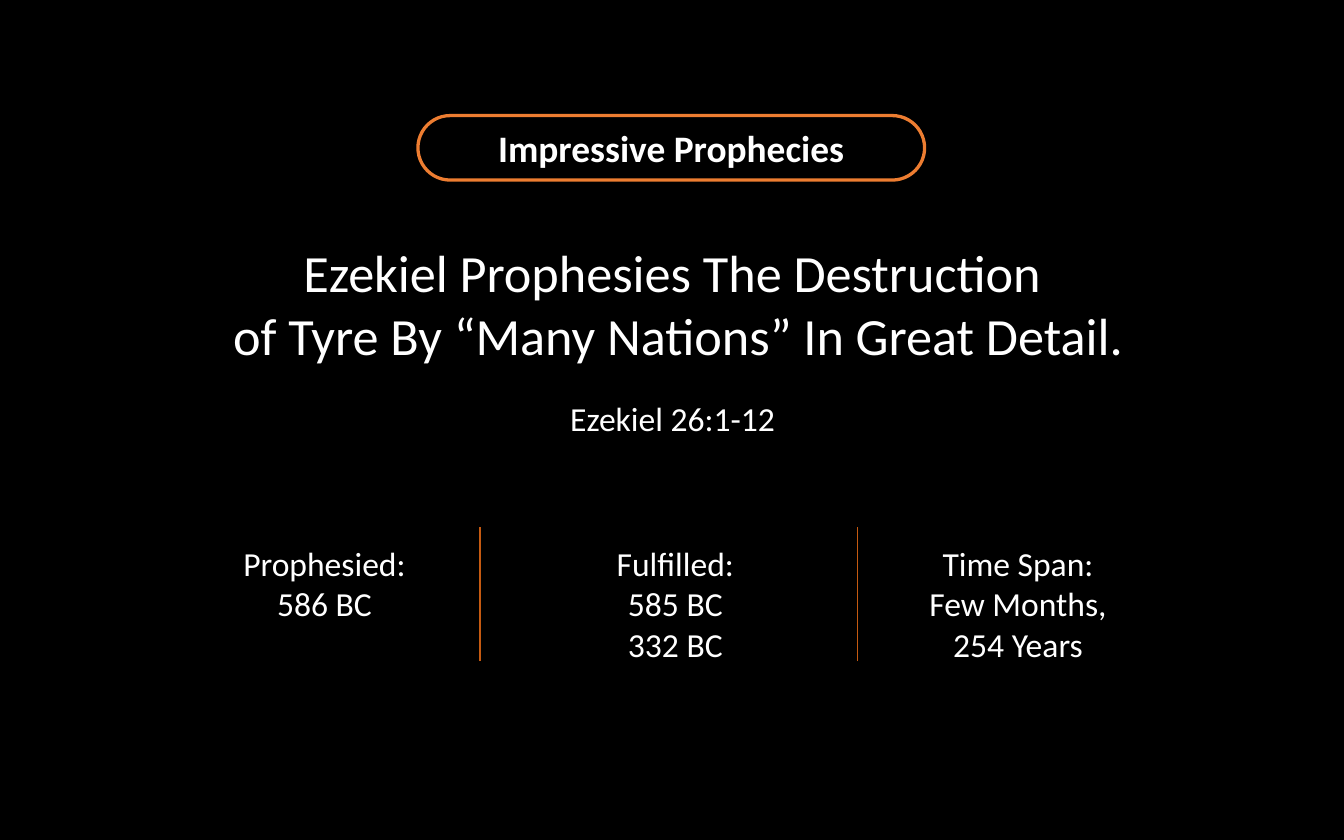
"""Build the slide on Ezekiel's prophecy against Tyre."""
from lxml.etree import SubElement
from pptx import Presentation
from pptx.dml.color import RGBColor
from pptx.enum.shapes import MSO_CONNECTOR, MSO_SHAPE
from pptx.enum.text import MSO_ANCHOR, MSO_AUTO_SIZE, PP_ALIGN
from pptx.oxml.ns import qn
from pptx.util import Pt

BADGE = "Impressive Prophecies"
HEADING = "Ezekiel Prophesies The Destruction\v of Tyre By “Many Nations” In Great Detail."
REFERENCE = "Ezekiel 26:1-12"
FACTS = [
    (126, 71, "Prophesied:\n586 BC"),
    (387, 101, "Fulfilled:\n585 BC\v332 BC"),
    (642, 101, "Time Span:\nFew Months,\v254 Years"),
]
DIVIDERS = [357, 638]

BLACK = RGBColor(0x00, 0x00, 0x00)
WHITE = RGBColor(0xFF, 0xFF, 0xFF)
ORANGE = RGBColor(0xED, 0x7D, 0x31)
RUST = RGBColor(0xC5, 0x5A, 0x11)

PX = 9144
FACT_TOP, FACT_WIDTH = 399, 231
DIVIDER_TOP, DIVIDER_BOTTOM = 392, 492


def px(*lengths):
    return [length * PX for length in lengths]


def write(shape, text, size, bold=False, anchor=MSO_ANCHOR.TOP):
    frame = shape.text_frame
    frame.text = text
    frame_format = {"word_wrap": True, "auto_size": MSO_AUTO_SIZE.NONE, "vertical_anchor": anchor}
    for name, value in frame_format.items():
        setattr(frame, name, value)
    font_format = {"name": "Calibri", "size": Pt(size), "bold": bold}
    for paragraph in frame.paragraphs:
        paragraph.alignment = PP_ALIGN.CENTER
        for run in paragraph.runs:
            for name, value in font_format.items():
                setattr(run.font, name, value)
            run.font.color.rgb = WHITE


def add_text(slide, box, text):
    write(slide.shapes.add_textbox(*px(*box)), text, 18)


def add_badge(slide):
    badge = slide.shapes.add_shape(MSO_SHAPE.ROUNDED_RECTANGLE, *px(311, 86, 377, 48))
    badge.adjustments[0] = 0.5
    badge.shadow.inherit = False
    badge.fill.background()
    badge.line.color.rgb = ORANGE
    badge.line.width = Pt(1.75)
    write(badge, BADGE, 20, True, MSO_ANCHOR.MIDDLE)


def add_heading(slide):
    title = slide.shapes.title
    for name, value in zip(("left", "top", "width", "height"), px(66, 174, 868, 104)):
        setattr(title, name, value)
    write(title, HEADING, 28)


def add_divider(slide, x):
    divider = slide.shapes.add_connector(
        MSO_CONNECTOR.STRAIGHT, *px(x, DIVIDER_BOTTOM, x, DIVIDER_TOP))
    divider.line.color.rgb = RUST
    divider.line.width = Pt(1)
    SubElement(divider.element.spPr, qn("a:effectLst"))


def main():
    presentation = Presentation()
    presentation.slide_width, presentation.slide_height = px(1000, 625)
    slide = presentation.slides.add_slide(presentation.slide_layouts[5])
    slide.background.fill.solid()
    slide.background.fill.fore_color.rgb = BLACK

    add_badge(slide)
    add_heading(slide)
    add_text(slide, (266, 291, 469, 40), REFERENCE)
    for left, height, text in FACTS:
        add_text(slide, (left, FACT_TOP, FACT_WIDTH, height), text)
    for x in DIVIDERS:
        add_divider(slide, x)

    presentation.save("out.pptx")


if __name__ == "__main__":
    main()
